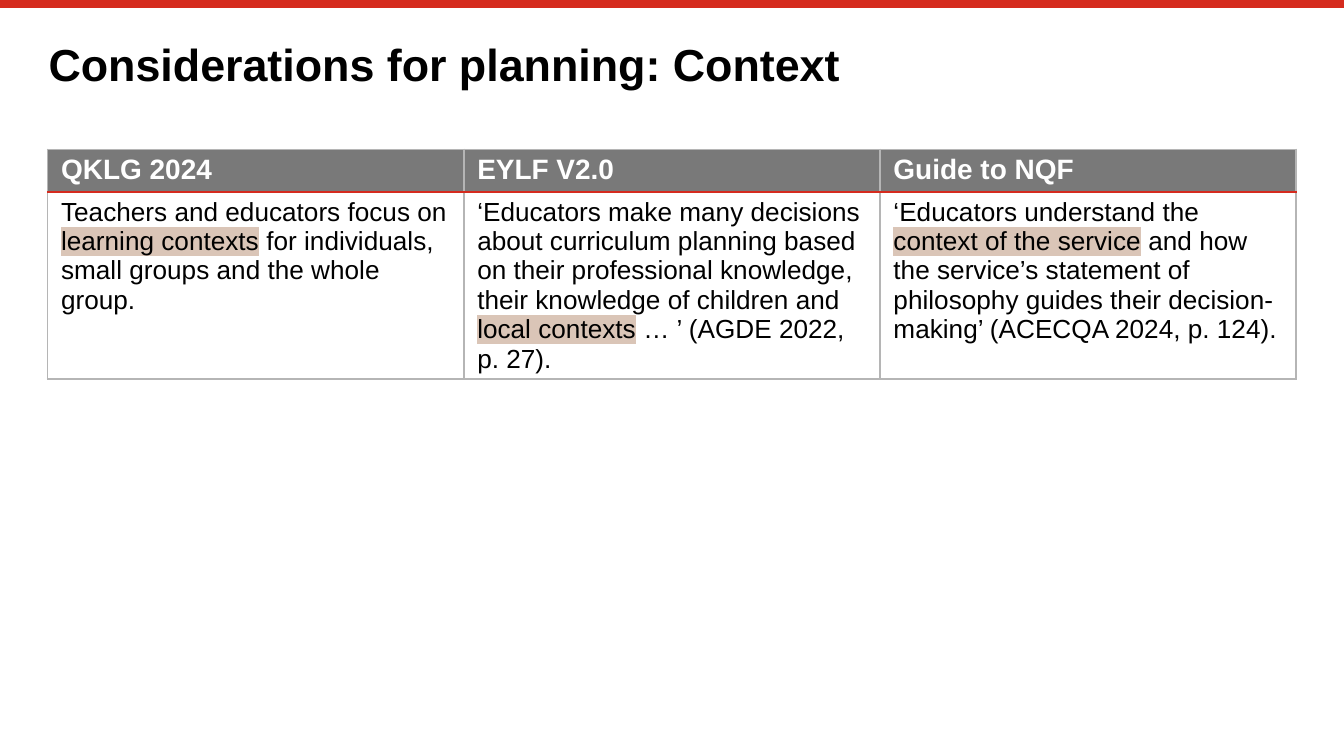
from lxml import etree
from pptx import Presentation
from pptx.dml.color import RGBColor
from pptx.enum.shapes import MSO_CONNECTOR
from pptx.enum.text import MSO_ANCHOR, PP_ALIGN
from pptx.oxml.ns import qn
from pptx.util import Pt

STRAIGHT = MSO_CONNECTOR.STRAIGHT
MIDDLE = MSO_ANCHOR.MIDDLE
TOP = MSO_ANCHOR.TOP
LEFT = PP_ALIGN.LEFT

SLIDE_WIDTH, SLIDE_HEIGHT = 720, 405
FONT = "Arial"
RED, GREY, HEADER_GREY = "D52B1E", "B5B5B5", "797979"
BLACK, WHITE, HIGHLIGHT = "000000", "FFFFFF", "DAC5B7"

TITLE = "Considerations for planning: Context"
HEADINGS = ["QKLG 2024", "EYLF V2.0", "Guide to NQF"]
QUOTES = [
    ("Teachers and educators focus on ", "learning contexts",
     " for individuals, small groups and the whole group."),
    ("‘Educators make many decisions about curriculum planning based on their "
     "professional knowledge, their knowledge of children and ",
     "local contexts", " … ’ (AGDE 2022, p. 27)."),
    ("‘Educators understand the ", "context of the service",
     " and how the service’s statement of philosophy guides their "
     "decision-making’ (ACECQA 2024, p. 124)."),
]


def color(value):
    """Return the colour for a hex string."""
    return RGBColor.from_string(value)


def style_paragraph(paragraph, size, hex_color, bold):
    """Set the font and left alignment of a paragraph."""
    paragraph.alignment = LEFT
    font = paragraph.font
    font.name, font.size, font.bold = FONT, Pt(size), bold
    font.color.rgb = color(hex_color)


def highlight_run(run):
    """Mark a run with the highlight colour."""
    highlight = etree.SubElement(run.font._element, qn("a:highlight"))
    etree.SubElement(highlight, qn("a:srgbClr"), val=HIGHLIGHT)


def set_borders(cell, borders):
    """Draw cell borders given as side: (colour, width)."""
    properties = cell._tc.get_or_add_tcPr()
    for side, (hex_color, width) in borders.items():
        line = etree.SubElement(properties, qn(f"a:ln{side}"), w=str(Pt(width)))
        fill = etree.SubElement(line, qn("a:solidFill"))
        etree.SubElement(fill, qn("a:srgbClr"), val=hex_color)


def add_top_rule(slide, left, top, width, weight):
    """Draw the red rule across the top of the slide."""
    rule = slide.shapes.add_connector(
        STRAIGHT, Pt(left), Pt(top), Pt(left + width), Pt(top))
    rule.line.color.rgb = color(RED)
    rule.line.width = Pt(weight)
    etree.SubElement(rule._element.spPr, qn("a:effectLst"))


def place_title(slide, left, top, width, height):
    """Move and format the title placeholder."""
    title = slide.shapes.title
    title.left, title.top = Pt(left), Pt(top)
    title.width, title.height = Pt(width), Pt(height)
    frame = title.text_frame
    frame.margin_left = frame.margin_right = Pt(0)
    frame.margin_top = frame.margin_bottom = Pt(0)
    frame.vertical_anchor = MIDDLE
    frame.word_wrap = True
    frame.text = TITLE
    paragraph = frame.paragraphs[0]
    paragraph.line_spacing = 0.9
    style_paragraph(paragraph, 24, BLACK, True)


def fill_cell(cell, parts, size, hex_color, bold, background, borders):
    """Write a cell's text, highlighting every second part."""
    set_borders(cell, borders)
    if background:
        cell.fill.solid()
        cell.fill.fore_color.rgb = color(background)
    else:
        cell.fill.background()
    cell.margin_left = cell.margin_right = Pt(7.2)
    cell.margin_top = cell.margin_bottom = Pt(2.8)
    cell.vertical_anchor = TOP
    paragraph = cell.text_frame.paragraphs[0]
    style_paragraph(paragraph, size, hex_color, bold)
    for index, text in enumerate(parts):
        run = paragraph.add_run()
        run.text = text
        if index % 2:
            highlight_run(run)


def add_comparison_table(slide, left, top, width, header_height, body_height):
    """Add the table that compares the three frameworks."""
    table = slide.shapes.add_table(
        2, len(HEADINGS), Pt(left), Pt(top), Pt(width),
        Pt(header_height + body_height)).table
    table.horz_banding = False
    table.rows[0].height = Pt(header_height)
    table.rows[1].height = Pt(body_height)
    thin, divider = (GREY, 1), (RED, 1.5)
    header_borders = {"L": thin, "R": thin, "T": thin, "B": divider}
    body_borders = {"L": thin, "R": thin, "T": divider, "B": thin}
    for index, (heading, quote) in enumerate(zip(HEADINGS, QUOTES)):
        table.columns[index].width = Pt(width / len(HEADINGS))
        fill_cell(table.cell(0, index), [heading], 15, WHITE, True,
                  HEADER_GREY, header_borders)
        fill_cell(table.cell(1, index), quote, 14, BLACK, False,
                  None, body_borders)


def main():
    """Build and save the slide."""
    presentation = Presentation()
    presentation.slide_width = Pt(SLIDE_WIDTH)
    presentation.slide_height = Pt(SLIDE_HEIGHT)
    slide = presentation.slides.add_slide(presentation.slide_layouts[5])
    add_top_rule(slide, 0, 2.1, SLIDE_WIDTH, 4.2)
    place_title(slide, 26, 21.6, 669, 28)
    add_comparison_table(slide, 25.5, 80, 669, 23, 100)
    presentation.save("out.pptx")


if __name__ == "__main__":
    main()
